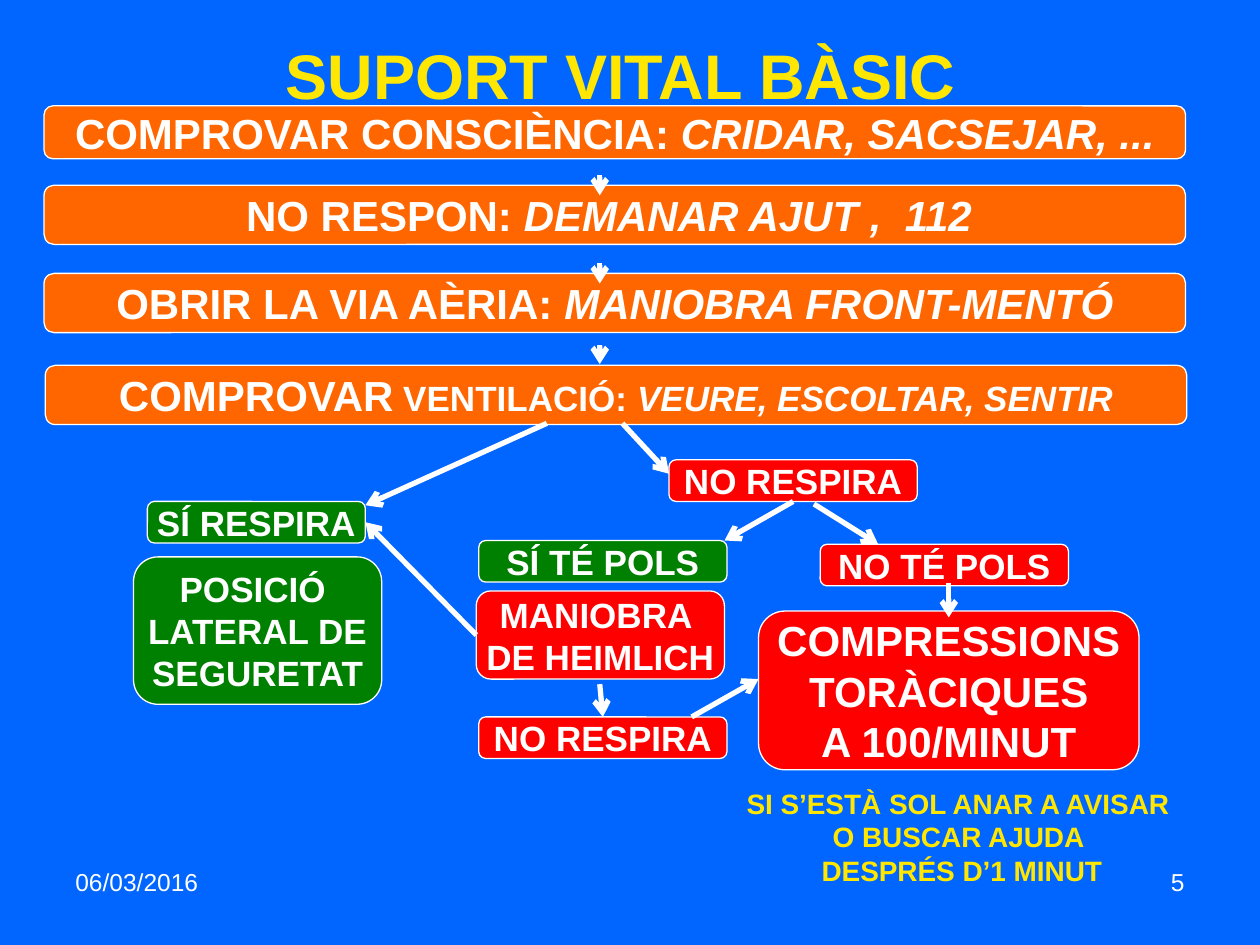
from pptx import Presentation
from pptx.dml.color import RGBColor
from pptx.enum import shapes, text
from pptx.oxml.ns import qn
from pptx.util import Inches, Pt
from lxml import etree

BLUE = RGBColor(0x00, 0x66, 0xFF)
ORANGE = RGBColor(0xFF, 0x66, 0x00)
GREEN = RGBColor(0x00, 0x80, 0x00)
RED = RGBColor(0xFF, 0x00, 0x00)
YELLOW = RGBColor(0xFF, 0xE7, 0x01)
WHITE = RGBColor(0xFF, 0xFF, 0xFF)
FONT = "Arial"
CENTER, RIGHT = text.PP_ALIGN.CENTER, text.PP_ALIGN.RIGHT

TITLE = "SUPORT VITAL BÀSIC "

# left, top, height, runs as (text, size, italic)
STEP_WIDTH = 9.06
STEPS = [
    (0.35, 0.84, 0.42, [("COMPROVAR CONSCIÈNCIA: ", 24, False),
                        ("CRIDAR, SACSEJAR, ...", 24, True)]),
    (0.35, 1.47, 0.47, [("NO RESPON: ", 24, False),
                        ("DEMANAR AJUT ,  112 ", 24, True)]),
    (0.35, 2.17, 0.47, [("OBRIR LA VIA AÈRIA: ", 24, False),
                        ("MANIOBRA FRONT-MENTÓ", 24, True)]),
    (0.36, 2.9, 0.47, [("COMPROVAR", 24, False), (" VENTILACIÓ: ", 20, False),
                       ("VEURE, ESCOLTAR, SENTIR", 20, True)]),
]

# name: (left, top, width, height), fill, size, lines
OUTCOMES = {
    "breathes": ((1.17, 3.98, 1.73, 0.33), GREEN, 20, ["SÍ RESPIRA"]),
    "recovery": ((1.06, 4.42, 1.97, 1.17), GREEN, 20,
                 ["POSICIÓ ", "LATERAL DE", "SEGURETAT"]),
    "not breathing": ((5.31, 3.65, 1.97, 0.33), RED, 20, ["NO RESPIRA"]),
    "pulse": ((3.8, 4.29, 1.97, 0.33), GREEN, 20, ["SÍ TÉ POLS"]),
    "no pulse": ((6.51, 4.32, 1.97, 0.33), RED, 20, ["NO TÉ POLS"]),
    "heimlich": ((3.78, 4.69, 1.97, 0.7), RED, 20, ["MANIOBRA ", "DE HEIMLICH"]),
    "still not breathing": ((3.8, 5.69, 1.97, 0.33), RED, 20, ["NO RESPIRA"]),
    "compressions": ((6.02, 4.85, 3.02, 1.26), RED, 24,
                     ["COMPRESSIONS", "TORÀCIQUES", "A 100/MINUT"]),
}

# start and end: a point, or (outcome name, side) where the arrow is joined
TOP, LEFT, BOTTOM, SIDE_RIGHT = range(4)
ARROWS = [
    ((4.76, 1.39), (4.76, 1.55)),
    ((4.76, 2.09), (4.76, 2.25)),
    ((4.76, 2.74), (4.76, 2.89)),
    ((4.34, 3.36), (2.9, 4.01)),
    ((4.94, 3.36), (5.31, 3.76)),
    (("not breathing", BOTTOM), (5.75, 4.29)),
    ((6.46, 4), (6.97, 4.32)),
    ((7.53, 4.63), (7.53, 4.9)),
    (("heimlich", LEFT), ("breathes", SIDE_RIGHT)),
    ((4.76, 5.43), ("still not breathing", TOP)),
    ((5.49, 5.69), (6.02, 5.39)),
]

# box, lines, size, colour, bold, alignment
NOTES = [
    ((5.62, 6.19, 4.03, 0.94),
     ["SI S’ESTÀ SOL ANAR A AVISAR ", "O BUSCAR AJUDA ", "DESPRÉS D’1 MINUT"],
     16, YELLOW, True, CENTER),
    ((0.5, 6.83, 2.33, 0.52), ["06/03/2016"], 14, WHITE, False, None),
    ((7.17, 6.83, 2.33, 0.52), ["5"], 14, WHITE, False, RIGHT),
]


def inches(box):
    return [Inches(v) for v in box]


def write(tf, paragraphs, color, bold=True, align=CENTER):
    """Fill a text frame; each paragraph is a list of (text, size, italic)."""
    for i, runs in enumerate(paragraphs):
        p = tf.paragraphs[0] if i == 0 else tf.add_paragraph()
        p.alignment = align
        p.font.name, p.font.bold, p.font.color.rgb = FONT, bold, color
        p.font.size = Pt(runs[0][1])
        for words, size, italic in runs:
            r = p.add_run()
            r.text = words
            r.font.size, r.font.italic = Pt(size), italic


def plain(lines, size):
    return [[(line, size, False)] for line in lines]


def add_box(s, box, fill, paragraphs):
    sp = s.shapes.add_shape(shapes.MSO_SHAPE.ROUNDED_RECTANGLE, *inches(box))
    sp.shadow.inherit = False
    sp.fill.solid()
    sp.fill.fore_color.rgb = fill
    sp.line.color.rgb = WHITE
    sp.line.width = Pt(0.75)
    tf = sp.text_frame
    tf.word_wrap = False
    tf.vertical_anchor = text.MSO_ANCHOR.MIDDLE
    write(tf, paragraphs, WHITE)
    return sp


def add_arrow(s, start, end, boxes):
    joined = [isinstance(e[0], str) for e in (start, end)]
    points = [(0, 0) if j else inches(e) for j, e in zip(joined, (start, end))]
    line = s.shapes.add_connector(shapes.MSO_CONNECTOR.STRAIGHT,
                                  *points[0], *points[1])
    if joined[0]:
        line.begin_connect(boxes[start[0]], start[1])
    if joined[1]:
        line.end_connect(boxes[end[0]], end[1])
    line.line.color.rgb = WHITE
    line.line.width = Pt(3)
    etree.SubElement(line.line._get_or_add_ln(), qn("a:tailEnd"), type="arrow")
    etree.SubElement(line._element.spPr, qn("a:effectLst"))


def main():
    prs = Presentation()
    prs.slide_width, prs.slide_height = Inches(10), Inches(7.5)
    s = prs.slides.add_slide(prs.slide_layouts[5])
    s.background.fill.solid()
    s.background.fill.fore_color.rgb = BLUE

    title = s.shapes.title
    title.left, title.top, title.width, title.height = inches((0.9, 0.21, 8.19, 0.7))
    tf = title.text_frame
    tf.auto_size = text.MSO_AUTO_SIZE.NONE
    tf.vertical_anchor = text.MSO_ANCHOR.BOTTOM
    tf.margin_bottom = Inches(0.02)
    write(tf, plain([TITLE], 36), YELLOW)

    for left, top, height, runs in STEPS:
        add_box(s, (left, top, STEP_WIDTH, height), ORANGE, [runs])
    boxes = {name: add_box(s, box, fill, plain(lines, size))
             for name, (box, fill, size, lines) in OUTCOMES.items()}
    for start, end in ARROWS:
        add_arrow(s, start, end, boxes)

    for box, lines, size, color, bold, align in NOTES:
        tf = s.shapes.add_textbox(*inches(box)).text_frame
        tf.word_wrap = True
        write(tf, plain(lines, size), color, bold, align)

    prs.save("out.pptx")


if __name__ == "__main__":
    main()
